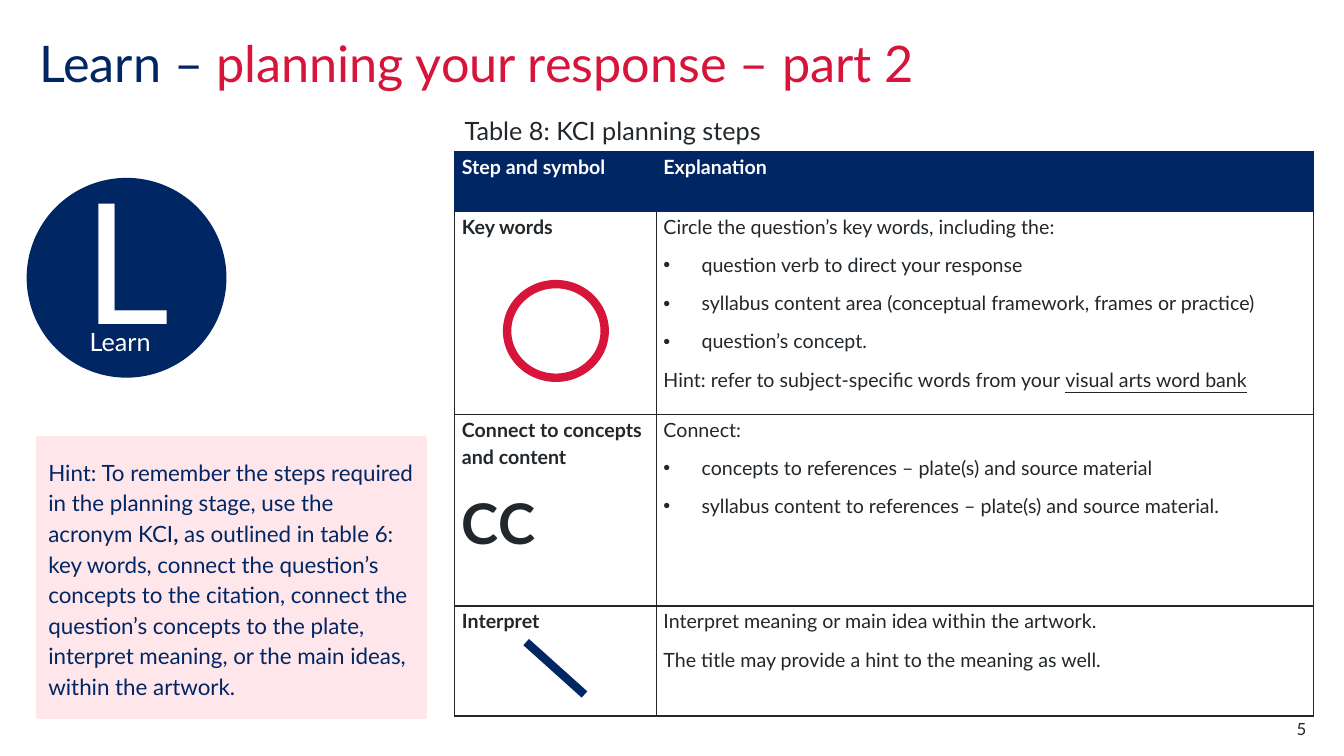
from lxml.etree import SubElement
from pptx import Presentation
from pptx.dml.color import RGBColor
from pptx.enum.shapes import MSO_CONNECTOR as CONN, MSO_SHAPE as SHAPE
from pptx.enum.text import MSO_ANCHOR as ANCHOR, PP_ALIGN as ALIGN
from pptx.oxml.ns import qn
from pptx.util import Cm, Pt

rgb = RGBColor.from_string
NAVY, RED, INK, PINK, WHITE = "002664", "D7153A", "22272B", "FFE6EA", "FFFFFF"


def add_run(p, text, size, color, bold=False, underline=False):
    r = p.add_run()
    r.text = text
    r.font.name = "Lato"
    r.font.size = Pt(size)
    r.font.color.rgb = rgb(color)
    r.font.bold = bold
    r.font.underline = underline


def add_text(shapes, left, top, width, height, inset=0):
    """Add a wrapping text box and return its first paragraph."""
    tf = shapes.add_textbox(Cm(left), Cm(top), Cm(width), Cm(height)).text_frame
    tf.word_wrap = True
    tf.margin_left = tf.margin_right = Cm(inset)
    tf.margin_top = tf.margin_bottom = Cm(inset / 2)
    return tf.paragraphs[0]


prs = Presentation()
prs.slide_width, prs.slide_height = Cm(33.87), Cm(19.05)
s = prs.slides.add_slide(prs.slide_layouts[6])

# Title
p = add_text(s.shapes, 0.99, 0.99, 28, 2.8)
p.line_spacing = 0.9
add_run(p, "Learn – ", 36, NAVY)
add_run(p, "planning your response – part 2", 36, RED)

# Learn badge
badge = s.shapes.add_group_shape()
disc = badge.shapes.add_shape(SHAPE.OVAL, Cm(0.69), Cm(4.5), Cm(5), Cm(5))
disc.shadow.inherit = False
disc.fill.solid()
disc.fill.fore_color.rgb = disc.line.color.rgb = rgb(NAVY)
disc.line.width = Pt(1)
tf = disc.text_frame
tf.vertical_anchor = ANCHOR.MIDDLE
tf.margin_bottom = Cm(1.14)
p = tf.paragraphs[0]
p.alignment = ALIGN.CENTER
add_run(p, "L", 120, WHITE)
add_run(add_text(badge.shapes, 2.26, 8.23, 1.85, 1.22), "Learn", 18, WHITE)

# Hint panel
hint = s.shapes.add_shape(SHAPE.RECTANGLE, Cm(0.97), Cm(11.05), Cm(9.73), Cm(7.01))
hint.shadow.inherit = False
hint.fill.solid()
hint.fill.fore_color.rgb = hint.line.color.rgb = rgb(PINK)
hint.line.width = Pt(3)
tf = hint.text_frame
tf.word_wrap = True
tf.vertical_anchor = ANCHOR.MIDDLE
p = tf.paragraphs[0]
p.alignment = ALIGN.LEFT
p.line_spacing = 1.14
add_run(p, "Hint: To remember the steps required in the planning stage, use the acronym KCI", 16, NAVY)
add_run(p, ",", 16, NAVY, bold=True)
add_run(p, " as outlined in table 6: key words, connect the question’s concepts to the citation, "
        "connect the question’s concepts to the plate, interpret meaning, or the main ideas, "
        "within the artwork.", 16, NAVY)

# Planning steps table; a leading bullet marks a list item, a bar starts underlined text
p = add_text(s.shapes, 11.46, 2.77, 9.65, 1.02, inset=0.25)
add_run(p, "Table 8: KCI planning steps", 18, INK)

steps = [
    (["Step and symbol"], ["Explanation"]),
    (["Key words"],
     ["Circle the question’s key words, including the:",
      "•question verb to direct your response",
      "•syllabus content area (conceptual framework, frames or practice)",
      "•question’s concept.",
      "Hint: refer to subject-specific words from your |visual arts word bank"]),
    (["Connect to concepts and content", "CC"],
     ["Connect:",
      "•concepts to references – plate(s) and source material",
      "•syllabus content to references – plate(s) and source material."]),
    (["Interpret"],
     ["Interpret meaning or main idea within the artwork.",
      "The title may provide a hint to the meaning as well."]),
]
widths, heights = [5.08, 16.56], [1.52, 5.11, 4.83, 2.77]
table = s.shapes.add_table(len(steps), 2, Cm(11.46), Cm(3.81),
                           Cm(sum(widths)), Cm(sum(heights))).table
for column, width in zip(table.columns, widths):
    column.width = Cm(width)
for row, height in zip(table.rows, heights):
    row.height = Cm(height)

for i, step in enumerate(steps):
    header = i == 0
    for j, lines in enumerate(step):
        cell = table.cell(i, j)
        cell.margin_left = cell.margin_right = Cm(0.18)
        cell.margin_top = cell.margin_bottom = 0
        tcPr = cell._tc.get_or_add_tcPr()
        for side in ("lnL", "lnR", "lnT", "lnB"):
            edge = header and side != "lnB"
            ln = SubElement(tcPr, qn(f"a:{side}"), w=str(Pt(0.5 if edge else 1)))
            fill = SubElement(ln, qn("a:solidFill"))
            SubElement(fill, qn("a:srgbClr"), val=NAVY if edge else INK)
        if header:
            cell.fill.solid()
            cell.fill.fore_color.rgb = rgb(NAVY)
        else:
            cell.fill.background()

        tf = cell.text_frame
        for k, line in enumerate(lines):
            p = tf.add_paragraph() if k else tf.paragraphs[0]
            p.line_spacing = 1.15
            p.space_before = Pt(4 if k else 0)
            p.space_after = Pt(4)
            if line.startswith("•"):
                pPr = p._p.get_or_add_pPr()
                pPr.set("marL", str(Cm(0.96)))
                pPr.set("indent", str(Cm(-0.96)))
                SubElement(pPr, qn("a:buFont"), typeface="Arial")
                SubElement(pPr, qn("a:buChar"), char="•")
            for n, text in enumerate(line.lstrip("•").split("|")):
                add_run(p, text, 40 if text == "CC" else 14, WHITE if header else INK,
                        bold=header or j == 0, underline=n == 1)

# Step symbols
ring = s.shapes.add_shape(SHAPE.OVAL, Cm(12.78), Cm(7.16), Cm(2.46), Cm(2.36))
ring.shadow.inherit = False
ring.fill.background()
ring.line.color.rgb = rgb(RED)
ring.line.width = Pt(6)

stroke = s.shapes.add_connector(CONN.STRAIGHT, Cm(13.26), Cm(16.18), Cm(14.73), Cm(17.5))
SubElement(stroke._element.spPr, qn("a:effectLst"))
stroke.line.color.rgb = rgb(NAVY)
stroke.line.width = Pt(6)

# Page number
p = add_text(s.shapes, 30.91, 18.11, 2.01, 0.51)
p.alignment = ALIGN.RIGHT
add_run(p, "5", 12, INK)

prs.save("out.pptx")
